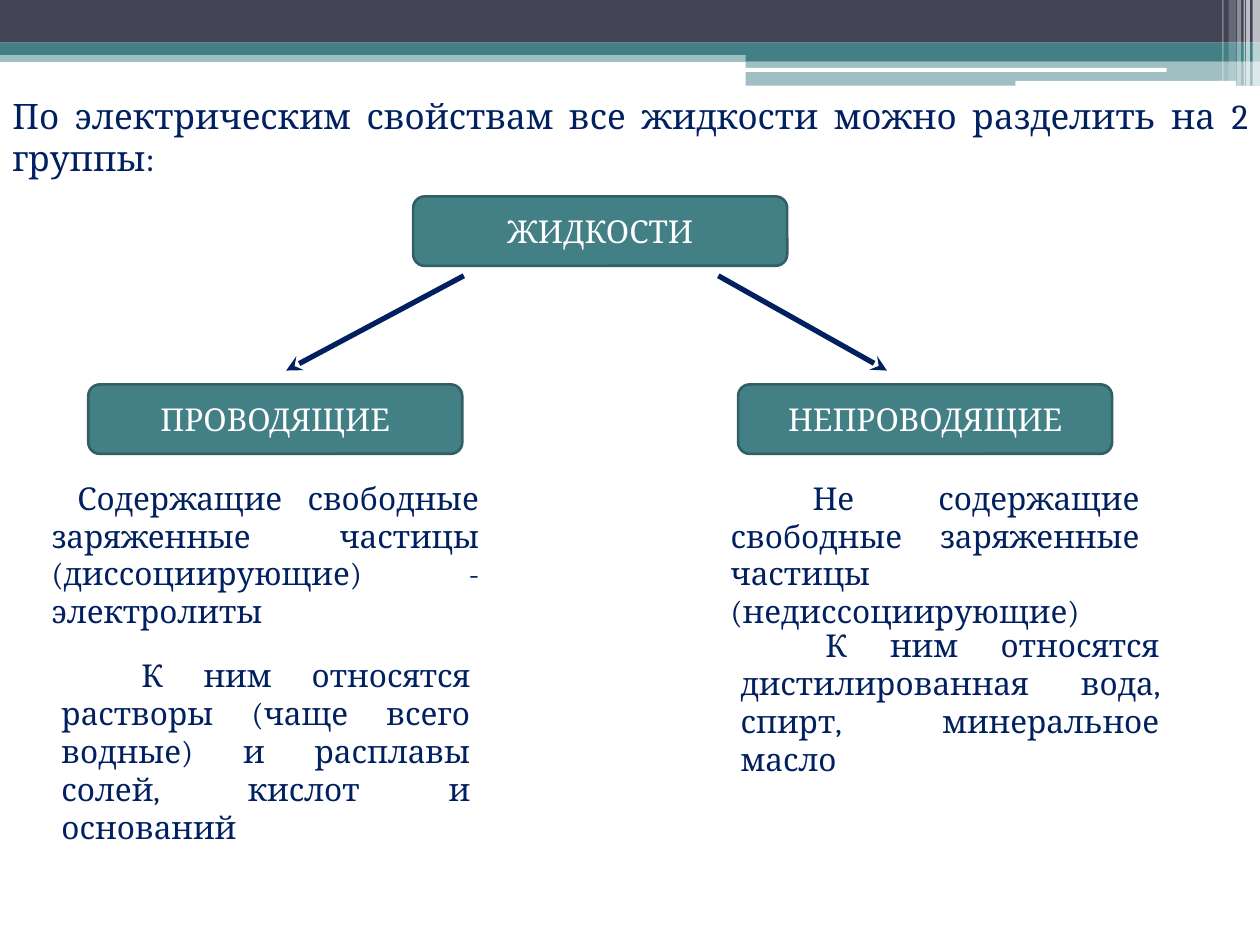
from lxml import etree
from pptx import Presentation
from pptx.dml.color import RGBColor
from pptx.enum.shapes import MSO_CONNECTOR, MSO_SHAPE
from pptx.enum.text import MSO_ANCHOR, MSO_AUTO_SIZE, PP_ALIGN
from pptx.oxml.ns import qn
from pptx.util import Cm, Pt

RECTANGLE = MSO_SHAPE.RECTANGLE
ROUNDED = MSO_SHAPE.ROUNDED_RECTANGLE
STRAIGHT = MSO_CONNECTOR.STRAIGHT
MIDDLE = MSO_ANCHOR.MIDDLE
GROW = MSO_AUTO_SIZE.SHAPE_TO_FIT_TEXT
CENTER, JUSTIFY = PP_ALIGN.CENTER, PP_ALIGN.JUSTIFY

FONT = "Cambria"
NAVY, TEAL, DARK_TEAL = "002060", "438086", "325F63"
SLATE, WHITE = "424456", "FFFFFF"
PAGE_WIDTH, PAGE_HEIGHT = 25.4, 19.05
BOX_WIDTH, BOX_HEIGHT = 7.54, 1.4


def color(hex_code):
    return RGBColor.from_string(hex_code)


def add_block(page, kind, left, top, width, height, fill, opacity=100):
    """Add a filled shape without outline; opacity is in percent."""
    block = page.shapes.add_shape(kind, Cm(left), Cm(top), Cm(width), Cm(height))
    block.shadow.inherit = False
    block.fill.solid()
    block.fill.fore_color.rgb = color(fill)
    block.line.fill.background()
    if opacity < 100:
        fill_color = block.fill._xPr.find(qn("a:solidFill"))[0]
        etree.SubElement(fill_color, qn("a:alpha"), val=str(opacity * 1000))
    return block


def write(para, text, size, hex_code, alignment):
    para.text = text
    para.alignment = alignment
    font = para.runs[0].font
    font.name, font.size = FONT, Pt(size)
    font.color.rgb = color(hex_code)


def add_group_box(page, left, top, text):
    box = add_block(page, ROUNDED, left, top, BOX_WIDTH, BOX_HEIGHT, TEAL)
    box.line.color.rgb = color(DARK_TEAL)
    box.line.width = Pt(1.5)
    box.text_frame.vertical_anchor = MIDDLE
    write(box.text_frame.paragraphs[0], text, 18, WHITE, CENTER)


def add_text(page, left, top, width, height, text, size=18, indent=0):
    box = page.shapes.add_textbox(Cm(left), Cm(top), Cm(width), Cm(height))
    frame = box.text_frame
    frame.word_wrap = True
    frame.auto_size = GROW
    para = frame.paragraphs[0]
    write(para, text, size, NAVY, JUSTIFY)
    if indent:
        para._p.get_or_add_pPr().set("indent", str(Cm(indent)))


def add_arrow(page, start_x, start_y, end_x, end_y):
    arrow = page.shapes.add_connector(
        STRAIGHT, Cm(start_x), Cm(start_y), Cm(end_x), Cm(end_y))
    arrow.line.color.rgb = color(NAVY)
    arrow.line.width = Pt(3)
    outline = arrow.line._get_or_add_ln()
    etree.SubElement(outline, qn("a:tailEnd"), type="stealth")
    etree.SubElement(arrow._element.spPr, qn("a:effectLst"))


def add_header(page):
    # Horizontal bands
    for left, top, width, height, fill, opacity in (
        (0, 1.02, PAGE_WIDTH, 0.23, TEAL, 50),
        (0, 0, PAGE_WIDTH, 0.86, SLATE, 100),
        (0, 0.86, PAGE_WIDTH, 0.25, TEAL, 100),
        (15.03, 0.99, 10.37, 0.24, TEAL, 100),
        (15.03, 1.23, 10.37, 0.5, TEAL, 50),
    ):
        add_block(page, RECTANGLE, left, top, width, height, fill, opacity)
    # White rounded strips
    for left, top, width, height in (
        (15.01, 1.37, 8.51, 0.08),
        (20.47, 1.63, 4.45, 0.1),
    ):
        add_block(page, ROUNDED, left, top, width, height, WHITE)
    # Translucent vertical stripes at the right edge
    for left, width, height, opacity in (
        (25.25, 0.15, 1.73, 65),
        (25.12, 0.08, 1.73, 65),
        (25.07, 0.03, 1.73, 60),
        (24.94, 0.08, 1.73, 40),
        (24.77, 0.15, 1.63, 20),
        (24.64, 0.03, 1.63, 30),
    ):
        add_block(page, RECTANGLE, left, 0, width, height, WHITE, opacity)


def main():
    deck = Presentation()
    deck.slide_width, deck.slide_height = Cm(PAGE_WIDTH), Cm(PAGE_HEIGHT)
    page = deck.slides.add_slide(deck.slide_layouts[6])

    add_header(page)
    add_text(page, 0, 1.78, PAGE_WIDTH, 1.11,
             "По электрическим свойствам все жидкости можно разделить на 2 группы:",
             size=20)

    # Arrows from the root to both groups
    add_arrow(page, 9.35, 5.56, 5.77, 7.47)
    add_arrow(page, 14.48, 5.56, 17.88, 7.47)

    # Descriptions and examples of each group
    add_text(page, 0.79, 9.53, 9.12, 3.33,
             "Содержащие свободные заряженные частицы (диссоциирующие) - электролиты",
             indent=0.52)
    add_text(page, 14.48, 9.53, 8.74, 2.57,
             "Не содержащие свободные заряженные частицы (недиссоциирующие)",
             indent=1.65)
    add_text(page, 0.99, 13.11, 8.74, 3.33,
             "К ним относятся растворы (чаще всего водные) и расплавы солей, "
             "кислот и оснований", indent=1.61)
    add_text(page, 14.68, 12.5, 8.94, 2.57,
             "К ним относятся дистилированная вода, спирт, минеральное масло",
             indent=1.71)

    # Classification boxes
    add_group_box(page, 8.33, 3.96, "ЖИДКОСТИ")
    add_group_box(page, 1.78, 7.75, "ПРОВОДЯЩИЕ")
    add_group_box(page, 14.88, 7.75, "НЕПРОВОДЯЩИЕ")

    deck.save("out.pptx")


if __name__ == "__main__":
    main()
